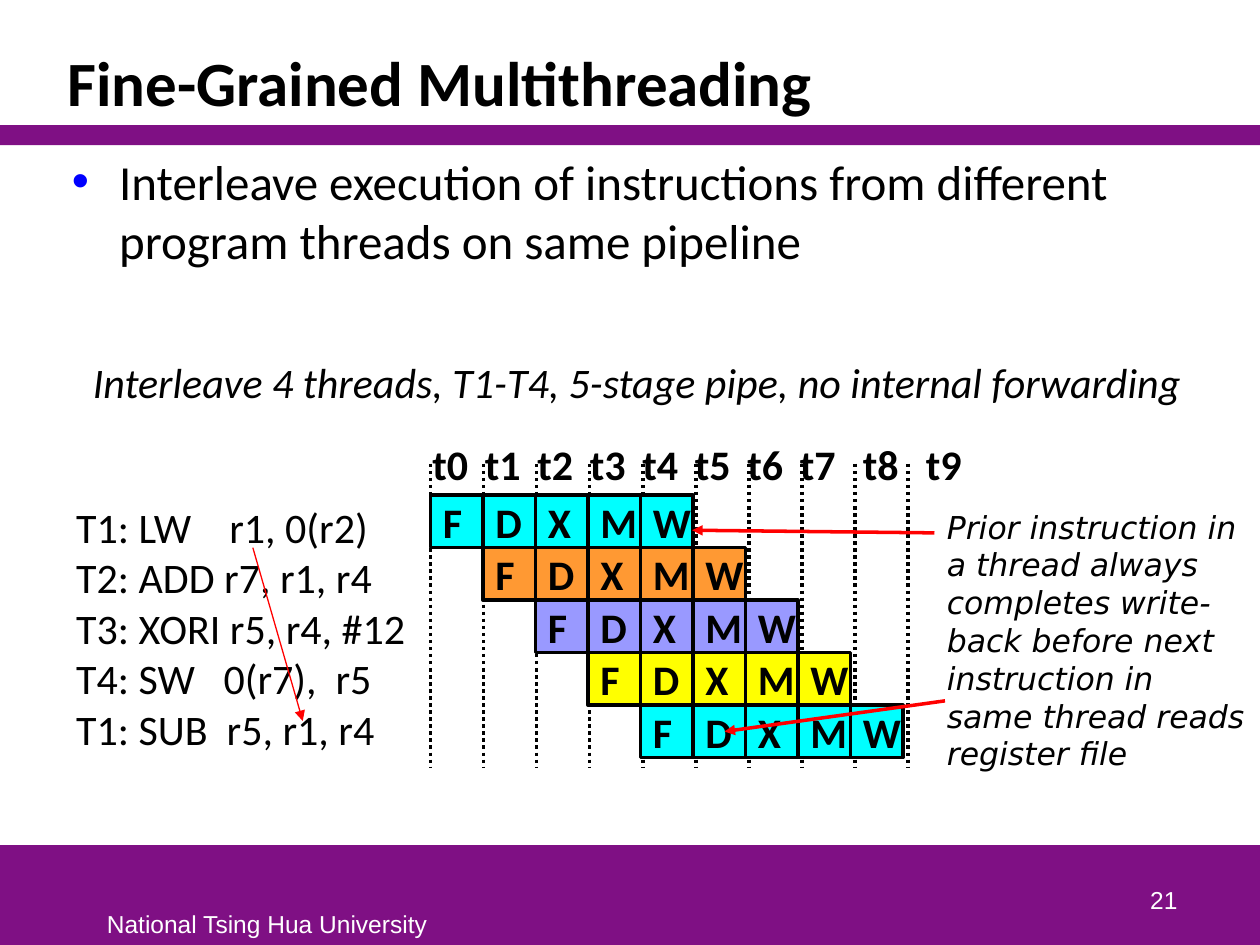
from dataclasses import dataclass

from lxml.etree import SubElement
from pptx import Presentation
from pptx.dml.color import RGBColor
from pptx.enum.dml import MSO_LINE
from pptx.enum.shapes import MSO_CONNECTOR, MSO_SHAPE
from pptx.enum.text import MSO_ANCHOR, MSO_AUTO_SIZE, PP_ALIGN
from pptx.oxml.ns import qn
from pptx.util import Pt

BLACK, WHITE, RED, PURPLE = "000000", "FFFFFF", "FF0000", "7F1084"
STAGES = "FDXMW"
CYCLES = 10
CELL = 30
PIPE_LEFT, PIPE_TOP = 246, 283
GUIDE_STEP = 30.33


@dataclass(frozen=True)
class Box:
    left: float
    top: float
    width: float
    height: float


@dataclass(frozen=True)
class Style:
    size: float
    font: str = "Calibri"
    color: str = BLACK
    bold: bool = False
    italic: bool = False


@dataclass(frozen=True)
class Instruction:
    text: str
    color: str


@dataclass(frozen=True)
class Arrow:
    start: tuple[float, float]
    end: tuple[float, float]
    weight: float


INSTRUCTIONS = [
    Instruction("T1: LW    r1, 0(r2)", "00FFFF"),
    Instruction("T2: ADD r7, r1, r4", "FF9933"),
    Instruction("T3: XORI r5, r4, #12", "9999FF"),
    Instruction("T4: SW   0(r7),  r5", "FFFF00"),
    Instruction("T1: SUB  r5, r1, r4", "00FFFF"),
]
ARROWS = [
    Arrow((534, 304.5), (395.5, 303), 2),
    Arrow((540, 400.5), (414, 418), 2),
    Arrow((144.5, 313), (173, 412), 0.75),
]
LABEL = Style(24, bold=True)


def rgb(color: str) -> RGBColor:
    return RGBColor.from_string(color)


def write(shape, text: str, style: Style, wrap: bool, anchor) -> None:
    frame = shape.text_frame
    frame.text = text
    frame.word_wrap = wrap
    frame.vertical_anchor = anchor
    for paragraph in frame.paragraphs:
        paragraph.alignment = PP_ALIGN.LEFT
        for run in paragraph.runs:
            font = run.font
            font.name, font.size = style.font, Pt(style.size)
            font.bold, font.italic = style.bold, style.italic
            font.color.rgb = rgb(style.color)


def add_text(slide, box: Box, text: str, style: Style, wrap: bool = False,
             grow: bool = True, anchor=MSO_ANCHOR.TOP):
    shape = slide.shapes.add_textbox(
        Pt(box.left), Pt(box.top), Pt(box.width), Pt(box.height))
    write(shape, text, style, wrap, anchor)
    shape.text_frame.auto_size = (
        MSO_AUTO_SIZE.SHAPE_TO_FIT_TEXT if grow else MSO_AUTO_SIZE.NONE)
    return shape.text_frame.paragraphs[0]


def add_rect(slide, box: Box, fill: str):
    rect = slide.shapes.add_shape(
        MSO_SHAPE.RECTANGLE, Pt(box.left), Pt(box.top), Pt(box.width), Pt(box.height))
    rect.shadow.inherit = False
    rect.fill.solid()
    rect.fill.fore_color.rgb = rgb(fill)
    rect.line.fill.background()
    return rect


def add_stage(slide, box: Box, stage: str, fill: str) -> None:
    cell = add_rect(slide, box, fill)
    cell.line.color.rgb = rgb(BLACK)
    cell.line.width = Pt(2)
    write(cell, stage, LABEL, False, MSO_ANCHOR.MIDDLE)


def add_line(slide, start: tuple[float, float], end: tuple[float, float],
             color: str, weight: float):
    line = slide.shapes.add_connector(
        MSO_CONNECTOR.STRAIGHT, *(Pt(value) for value in (*start, *end)))
    line.line.color.rgb = rgb(color)
    line.line.width = Pt(weight)
    SubElement(line._element.spPr, qn("a:effectLst"))
    return line


def add_arrow(slide, arrow: Arrow) -> None:
    line = add_line(slide, arrow.start, arrow.end, RED, arrow.weight)
    SubElement(line.line._get_or_add_ln(), qn("a:tailEnd"), type="triangle")


def add_bullet(paragraph, indent: float, color: str) -> None:
    properties = paragraph._p.get_or_add_pPr()
    properties.set("marL", str(Pt(indent)))
    properties.set("indent", str(-Pt(indent)))
    bullet_color = SubElement(properties, qn("a:buClr"))
    SubElement(bullet_color, qn("a:srgbClr"), val=color)
    SubElement(properties, qn("a:buFont"), typeface="Arial")
    SubElement(properties, qn("a:buChar"), char="•")


def add_page(slide) -> None:
    add_rect(slide, Box(0, 483, 720, 57), PURPLE)
    add_rect(slide, Box(0, 71.5, 720, 11.5), PURPLE)
    footer = Style(14, "Arial", WHITE)
    add_text(slide, Box(54, 516, 199, 24), "National Tsing Hua University", footer)
    title = add_text(slide, Box(31.5, 18, 646, 53.5), "Fine-Grained Multithreading",
                     Style(36, bold=True), wrap=True, grow=False,
                     anchor=MSO_ANCHOR.BOTTOM)
    title.line_spacing = 0.85
    summary = add_text(
        slide, Box(34, 83, 644, 391),
        "Interleave execution of instructions from different "
        "program threads on same pipeline",
        Style(28), wrap=True, grow=False)
    add_bullet(summary, 27, "0000FF")
    number = add_text(slide, Box(530, 490, 150, 36), "21", footer, wrap=True,
                      grow=False, anchor=MSO_ANCHOR.BOTTOM)
    number.alignment = PP_ALIGN.RIGHT


def add_pipeline(slide) -> None:
    for cycle in range(CYCLES):
        x = PIPE_LEFT + cycle * GUIDE_STEP
        guide = add_line(slide, (x, 265), (x, 439), BLACK, 2)
        guide.line.dash_style = MSO_LINE.ROUND_DOT
    for row, instruction in enumerate(INSTRUCTIONS):
        for column, stage in enumerate(STAGES, start=row):
            cell = Box(PIPE_LEFT + column * CELL, PIPE_TOP + row * CELL, CELL, CELL)
            add_stage(slide, cell, stage, instruction.color)
    for cycle in range(CYCLES):
        extra = 6 * max(0, cycle - 7)
        add_text(slide, Box(240 + cycle * CELL + extra, 247, 35, 36.5),
                 f"t{cycle}", LABEL)
    program = "\n".join(instruction.text for instruction in INSTRUCTIONS)
    add_text(slide, Box(36.5, 283, 204.5, 152.5), program, Style(24))


def main() -> None:
    deck = Presentation()
    deck.slide_width, deck.slide_height = Pt(720), Pt(540)
    slide = deck.slides.add_slide(deck.slide_layouts[6])
    add_page(slide)
    add_pipeline(slide)
    add_text(slide, Box(46, 200, 643, 36.5),
             "Interleave 4 threads, T1-T4, 5-stage pipe, no internal forwarding",
             Style(24, italic=True))
    add_text(slide, Box(534, 286.5, 186, 158.5),
             "Prior instruction in a thread always completes write-back before "
             "next instruction in same thread reads register file",
             Style(18, "DejaVu Sans", italic=True), wrap=True)
    for arrow in ARROWS:
        add_arrow(slide, arrow)
    deck.save("out.pptx")


if __name__ == "__main__":
    main()
